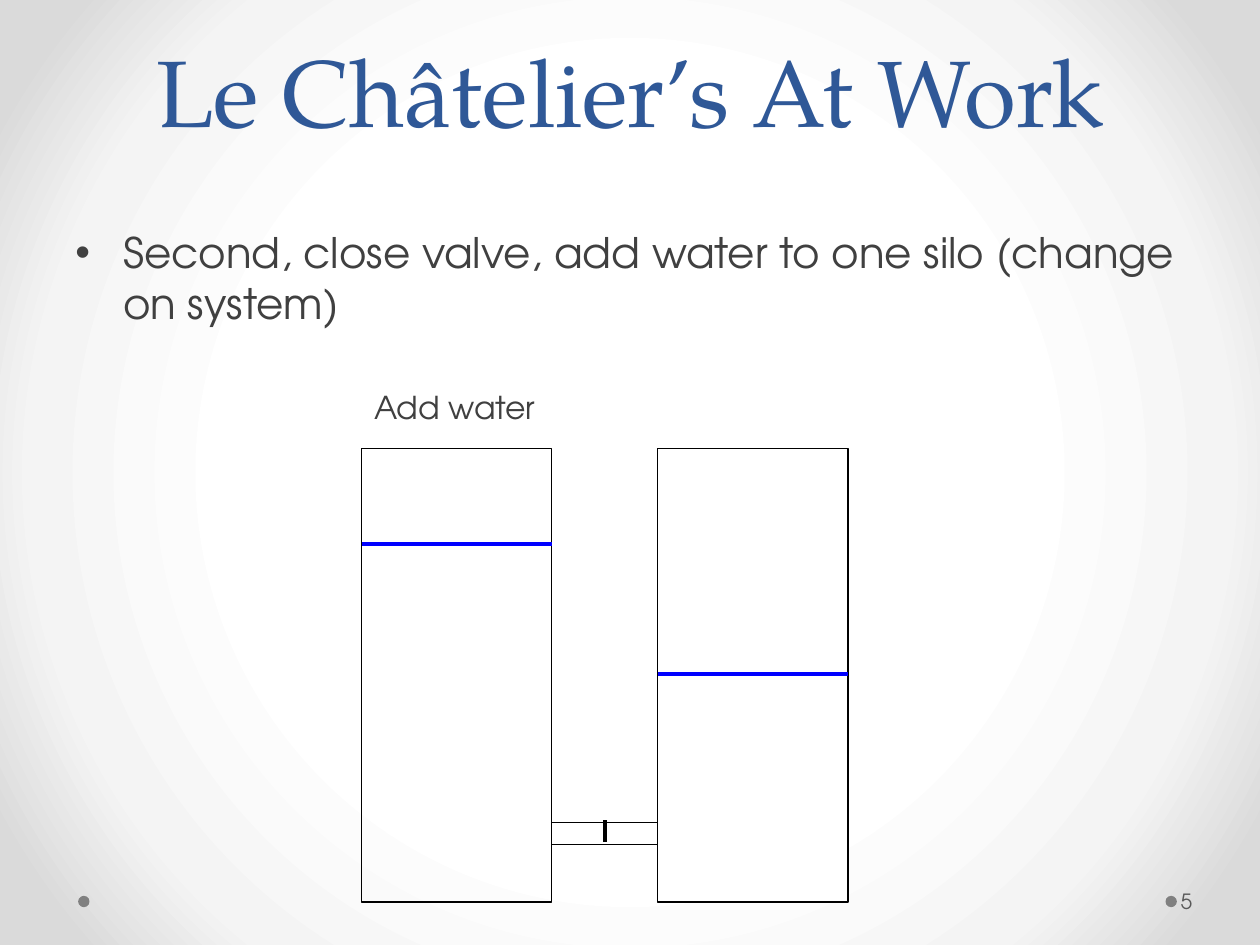
"""Build the slide of two silos joined by a closed valve."""
from lxml import etree
from pptx import Presentation
from pptx import util as u
from pptx.dml.color import RGBColor
from pptx.enum import shapes, text
from pptx.oxml.ns import qn

TITLE = "Le Châtelier’s At Work"
BULLET = "Second, close valve, add water to one silo (change on system)"
LABEL = "Add water"
NUMBER = "5"
SILOS = [{"fill": None, "level": 57.6}, {"fill": "paper", "level": 71.33}]

THEME = {
    "head": "TeX Gyre Pagella", "body": "TeX Gyre Adventor",
    "title": "2F5897", "text": "404040", "number": "595959", "dot": "808080",
    "paper": "FFFFFF", "ink": "000000", "water": "0000FF",
    "stops": [(50, "FFFFFF"), (76, "F4F4F4"), (92, "DADADA")],
    "title_pt": 54, "body_pt": 24, "label_pt": 18, "number_pt": 12,
    "thin": 0.75, "thick": 2.25,
}

WIDTH, HEIGHT = u.Inches(10), u.Inches(7.5)
SILO_X, SILO_Y, SILO_W, SILO_H = 28.7, 47.47, 15.1, 48
PIPE_W, PIPE_Y, PIPE_H = 8.4, 87.07, 2.27
VALVE_Y = 86.8


def share(*values):
    """Turn alternating x and y percentages into slide lengths."""
    sizes = (WIDTH, HEIGHT)
    return [int(sizes[i % 2] * v / 100) for i, v in enumerate(values)]


def rgb(name):
    return RGBColor.from_string(THEME[name])


def paint_background(s):
    s.background.fill.gradient()
    grad = next(s.element.iter(qn("a:gradFill")))
    for child in list(grad):
        grad.remove(child)
    stops = etree.SubElement(grad, qn("a:gsLst"))
    for pos, color in THEME["stops"]:
        stop = etree.SubElement(stops, qn("a:gs"), pos=str(pos * 1000))
        etree.SubElement(stop, qn("a:srgbClr"), val=color)
    circle = etree.SubElement(grad, qn("a:path"))
    circle.set("path", "circle")
    etree.SubElement(circle, qn("a:fillToRect"),
                     {side: "50000" for side in "ltrb"})


def add_shape(s, kind, box, fill=None, line=None):
    sp = s.shapes.add_shape(kind, *share(*box))
    sp.shadow.inherit = False
    if fill:
        sp.fill.solid()
        sp.fill.fore_color.rgb = rgb(fill)
    else:
        sp.fill.background()
    if line:
        sp.line.color.rgb = rgb(line)
        sp.line.width = u.Pt(THEME["thin"])
    else:
        sp.line.fill.background()


def add_line(s, ends, color):
    c = s.shapes.add_connector(shapes.MSO_CONNECTOR.STRAIGHT, *share(*ends))
    c.line.color.rgb = rgb(color)
    c.line.width = u.Pt(THEME["thick"])
    etree.SubElement(c.element.spPr, qn("a:effectLst"))


def add_text(s, words, box, size, color, font="body", wrap=True):
    tf = s.shapes.add_textbox(*share(*box)).text_frame
    tf.text = words
    tf.word_wrap = wrap
    p = tf.paragraphs[0]
    r = p.runs[0]
    r.font.name = THEME[font]
    r.font.size = u.Pt(THEME[size])
    r.font.color.rgb = rgb(color)
    return tf, p


def add_bullet(p):
    pPr = p._p.get_or_add_pPr()
    indent = u.Inches(0.38)
    pPr.set("marL", str(indent))
    pPr.set("indent", str(-indent))
    etree.SubElement(pPr, qn("a:buFont"), typeface="Arial")
    etree.SubElement(pPr, qn("a:buChar"), char="•")


def add_silos(s):
    rect = shapes.MSO_SHAPE.RECTANGLE
    for i, silo in enumerate(SILOS):
        x = SILO_X + i * (SILO_W + PIPE_W)
        add_shape(s, rect, (x, SILO_Y, SILO_W, SILO_H), silo["fill"], "ink")
        add_line(s, (x, silo["level"], x + SILO_W, silo["level"]), "water")
    pipe_x = SILO_X + SILO_W
    add_shape(s, rect, (pipe_x, PIPE_Y, PIPE_W, PIPE_H), "paper", "ink")
    valve_x = pipe_x + PIPE_W / 2
    add_line(s, (valve_x, VALVE_Y, valve_x, VALVE_Y + PIPE_H), "ink")


def main():
    prs = Presentation()
    prs.slide_width, prs.slide_height = WIDTH, HEIGHT
    s = prs.slides.add_slide(prs.slide_layouts[6])
    paint_background(s)
    for x in (92.5, 6.2):
        add_shape(s, shapes.MSO_SHAPE.OVAL, (x, 94.8, 0.9, 1.2), "dot")

    tf, p = add_text(s, TITLE, (5, 0, 90, 16.13), "title_pt", "title", "head")
    tf.vertical_anchor = text.MSO_ANCHOR.BOTTOM
    p.alignment = text.PP_ALIGN.CENTER
    p.line_spacing = u.Pt(58)

    tf, p = add_text(s, BULLET, (5, 23.33, 90, 66), "body_pt", "text")
    p.space_before = u.Pt(THEME["body_pt"] * 0.2)
    add_bullet(p)

    add_silos(s)
    add_text(s, LABEL, (SILO_X, 40.4, SILO_W, 5.33), "label_pt", "text",
             wrap=False)
    tf, p = add_text(s, NUMBER, (93.4, 92.67, 6.1, 5.33), "number_pt", "number")
    tf.vertical_anchor = text.MSO_ANCHOR.MIDDLE
    tf.margin_left = u.Inches(0.03)
    tf.margin_right = u.Inches(0.05)
    prs.save("out.pptx")


if __name__ == "__main__":
    main()
